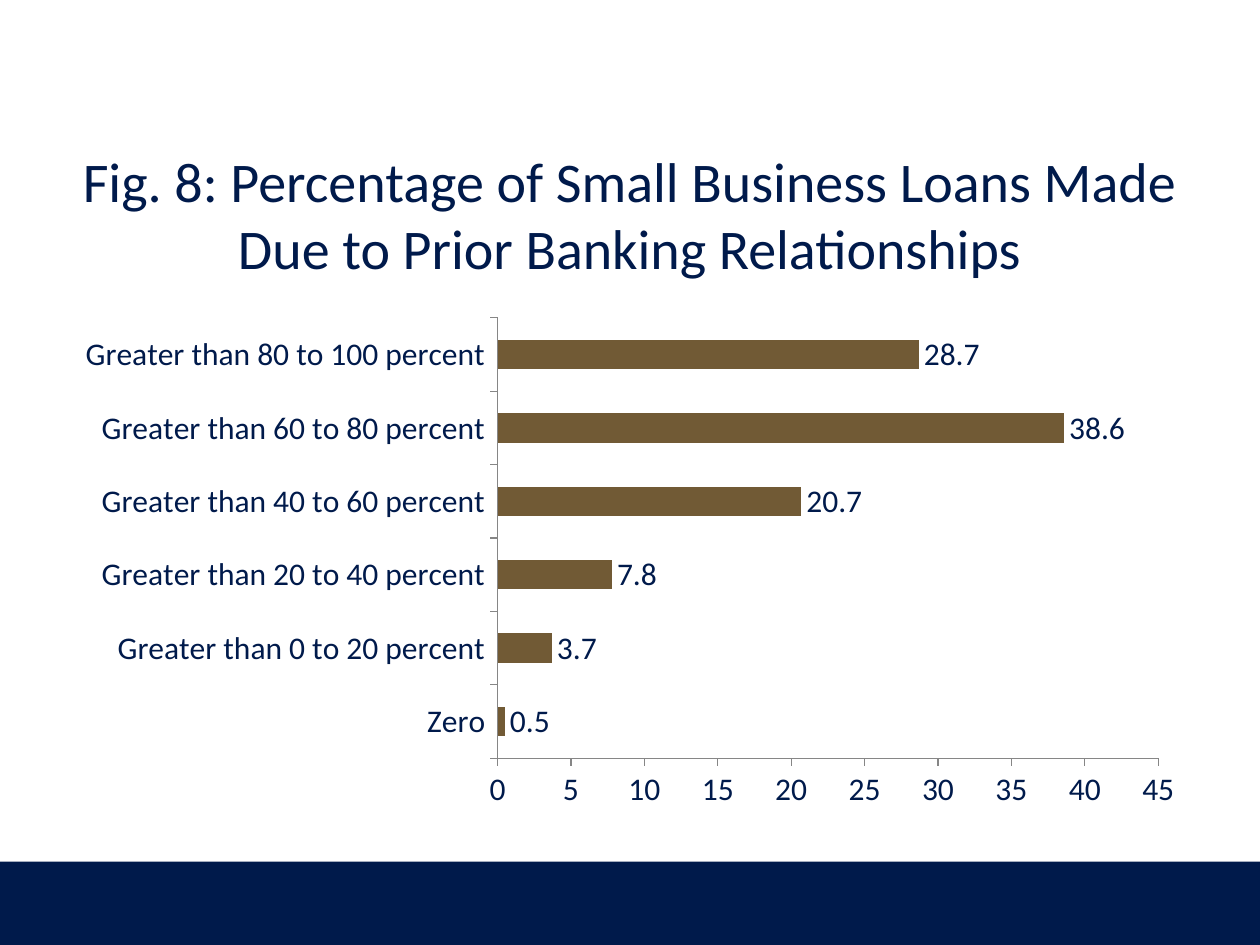
from pptx import Presentation
from pptx.chart.data import CategoryChartData
from pptx.dml.color import RGBColor
from pptx.enum.chart import XL_CHART_TYPE, XL_LABEL_POSITION, XL_TICK_MARK
from pptx.enum.shapes import MSO_SHAPE
from pptx.enum.text import MSO_ANCHOR, PP_ALIGN
from pptx.util import Cm, Pt

COLORS = {"navy": "001A4B", "brown": "715A35", "axis": "868686"}
FONT_NAME = "Calibri"
TITLE = "Fig. 8: Percentage of Small Business Loans Made Due to Prior Banking Relationships"
LOAN_SHARES = {
    "Zero": 0.5,
    "Greater than 0 to 20 percent": 3.7,
    "Greater than 20 to 40 percent": 7.8,
    "Greater than 40 to 60 percent": 20.7,
    "Greater than 60 to 80 percent": 38.6,
    "Greater than 80 to 100 percent": 28.7,
}


def color(name):
    return RGBColor.from_string(COLORS[name])


def style_font(font, size):
    font.name = FONT_NAME
    font.size = Pt(size)
    font.color.rgb = color("navy")


def add_footer_band(page):
    band = page.shapes.add_shape(MSO_SHAPE.RECTANGLE, 0, Cm(17.37), Cm(25.4), Cm(1.68))
    band.shadow.inherit = False
    band.fill.solid()
    band.fill.fore_color.rgb = color("navy")
    band.line.fill.background()


def set_title(page):
    title = page.shapes.title
    title.left, title.top, title.width, title.height = Cm(1.27), Cm(2.72), Cm(22.86), Cm(3.18)
    frame = title.text_frame
    frame.text = TITLE
    frame.word_wrap = True
    frame.vertical_anchor = MSO_ANCHOR.MIDDLE
    para = frame.paragraphs[0]
    para.alignment = PP_ALIGN.CENTER
    style_font(para.runs[0].font, 32)


def style_axis(axis):
    axis.has_major_gridlines = False
    axis.major_tick_mark = XL_TICK_MARK.OUTSIDE
    axis.minor_tick_mark = XL_TICK_MARK.NONE
    axis.format.line.color.rgb = color("axis")
    axis.format.line.width = Pt(0.75)
    style_font(axis.tick_labels.font, 18)


def add_loan_chart(page):
    data = CategoryChartData(number_format="#,##0.0")
    data.categories = list(LOAN_SHARES)
    data.add_series("Series 1", list(LOAN_SHARES.values()))
    chart = page.shapes.add_chart(
        XL_CHART_TYPE.BAR_CLUSTERED, Cm(1.27), Cm(6.2), Cm(22.86), Cm(10.31), data
    ).chart
    chart.has_title = False
    chart.has_legend = False
    style_font(chart.font, 18)

    style_axis(chart.category_axis)
    style_axis(chart.value_axis)
    chart.value_axis.minimum_scale = 0
    chart.value_axis.maximum_scale = 45
    chart.value_axis.major_unit = 5
    chart.value_axis.tick_labels.number_format = "General"
    chart.value_axis.tick_labels.number_format_is_linked = False

    plot = chart.plots[0]
    plot.gap_width = 150
    plot.vary_by_categories = False
    bars = plot.series[0]
    bars.format.fill.solid()
    bars.format.fill.fore_color.rgb = color("brown")
    labels = bars.data_labels
    labels.show_value = True
    labels.number_format = "#,##0.0"
    labels.number_format_is_linked = False
    labels.position = XL_LABEL_POSITION.OUTSIDE_END
    style_font(labels.font, 18)


def main():
    deck = Presentation()
    deck.slide_width, deck.slide_height = Cm(25.4), Cm(19.05)
    page = deck.slides.add_slide(deck.slide_layouts.get_by_name("Title Only"))
    add_footer_band(page)
    set_title(page)
    add_loan_chart(page)
    deck.save("out.pptx")


if __name__ == "__main__":
    main()
